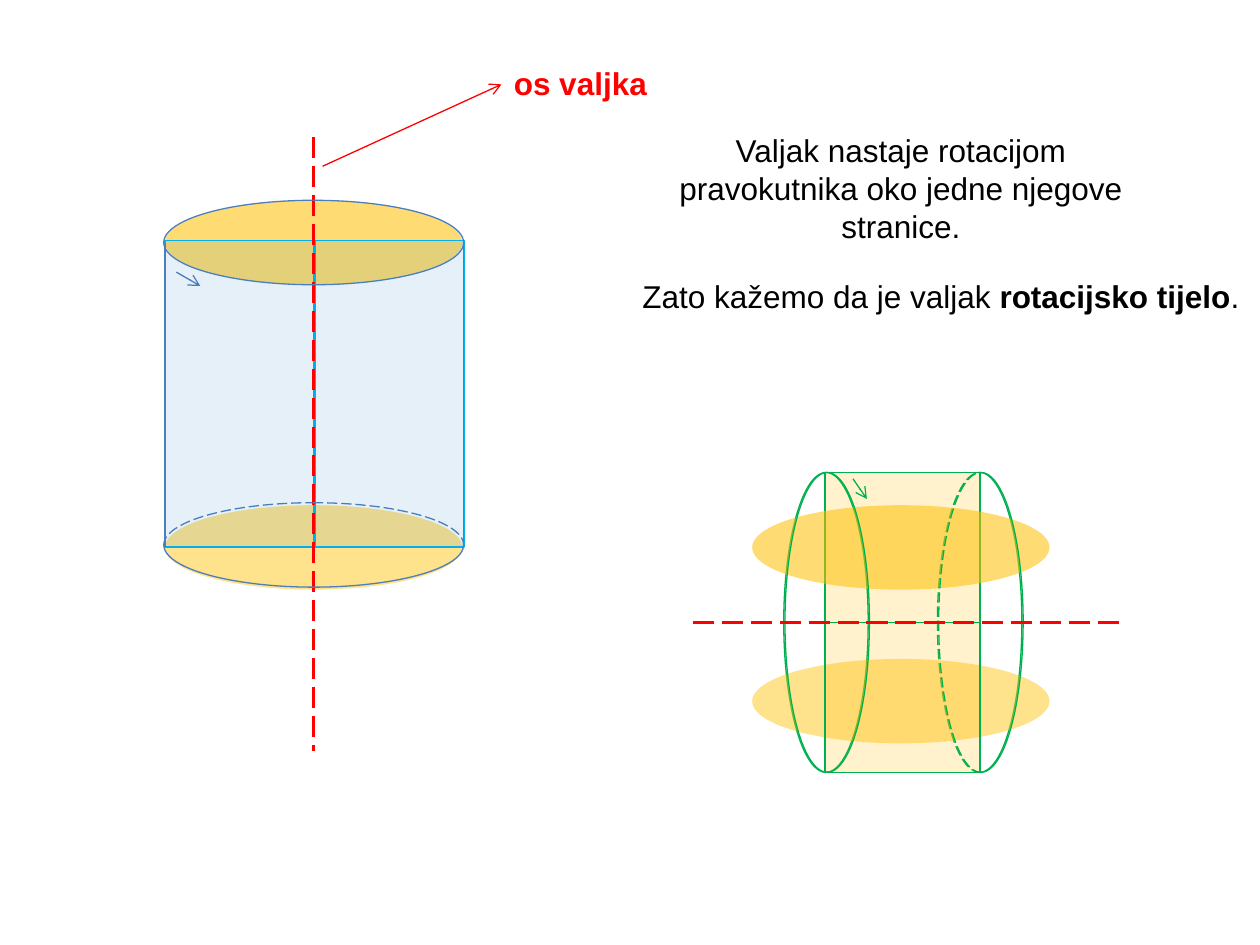
import pptx
import pptx.dml.color
import pptx.enum.dml
import pptx.enum.shapes
import pptx.enum.text
import pptx.oxml
import pptx.oxml.ns
import pptx.util
from pptx.util import Inches

RGBColor = pptx.dml.color.RGBColor
MSO = pptx.enum.shapes.MSO_SHAPE
DASH = pptx.enum.dml.MSO_LINE.LONG_DASH
ALIGN = pptx.enum.text.PP_ALIGN

GOLD = RGBColor(0xFF, 0xC0, 0x00)
GREEN = RGBColor(0x00, 0xB0, 0x50)
BLUE = RGBColor(0x00, 0x70, 0xC0)
SKY = RGBColor(0x00, 0xB0, 0xF0)
STEEL = RGBColor(0x4B, 0x7E, 0xBC)
RED = RGBColor(0xFF, 0x00, 0x00)
BLACK = RGBColor(0x00, 0x00, 0x00)

ARCS = {"left": (107.66, 160.88), "front": (215.63, 107.86), "right": (161.32, 0.57)}


def add_tag(parent, tag, **attrs):
    """Append an empty drawing element to a parent."""
    node = pptx.oxml.parse_xml(f"<a:{tag} {pptx.oxml.ns.nsdecls('a')}/>")
    for name, value in attrs.items():
        node.set(name, str(value))
    parent.append(node)


def set_line(line, color, width, dashed=False):
    """Give a line its colour, width and dash."""
    line.color.rgb = color
    line.width = pptx.util.Pt(width)
    if dashed:
        line.dash_style = DASH


def add_form(shapes, kind, box, fill=None, alpha=100, edge=None, width=1, dashed=False, turned=False):
    """Add a preset shape that covers the box, turned a quarter if asked."""
    x, y, w, h = box
    if turned:
        x, y, w, h = x + (w - h) / 2, y + (h - w) / 2, h, w
    form = shapes.add_shape(kind, Inches(x), Inches(y), Inches(w), Inches(h))
    form.shadow.inherit = False
    form.rotation = 90 if turned else 0
    if fill is None:
        form.fill.background()
    else:
        form.fill.solid()
        form.fill.fore_color.rgb = fill
        color = form.fill._xPr.find(".//" + pptx.oxml.ns.qn("a:srgbClr"))
        add_tag(color, "alpha", val=alpha * 1000)
    if edge is None:
        form.line.fill.background()
    else:
        set_line(form.line, edge, width, dashed)
    return form


def add_rim(shapes, box, color, dashes=(), turned=False):
    """Draw the edge of a base as three arcs."""
    for name, angles in ARCS.items():
        arc = add_form(shapes, MSO.ARC, box, edge=color, width=0.75,
                       dashed=name in dashes, turned=turned)
        for i, angle in enumerate(angles):
            arc.adjustments[i] = angle


def add_line(shapes, start, end, color, width=0.75, dashed=False, arrow=False):
    """Draw a straight line, with an arrowhead at its end if asked."""
    points = [Inches(v) for v in (*start, *end)]
    line = shapes.add_connector(pptx.enum.shapes.MSO_CONNECTOR.STRAIGHT, *points)
    set_line(line.line, color, width, dashed)
    if arrow:
        add_tag(line.line._get_or_add_ln(), "tailEnd", type="arrow")
    add_tag(line._element.spPr, "effectLst")


def add_discs(shapes, x, tops):
    """Draw the upper and lower golden bases."""
    for top, alpha in zip(tops, (55, 45)):
        add_form(shapes, MSO.OVAL, (x, top, 2.36, 0.67), GOLD, alpha)


def add_upright(shapes, box):
    """Draw the standing cylinder with its axis."""
    x, y, w, h = box
    mid, base = x + w / 2, y + 2.4
    add_discs(shapes, x + 0.01, (y, y + 2.42))
    for left in (mid, x + 0.01):
        add_form(shapes, MSO.RECTANGLE, (left, y + 0.32, w / 2, 2.43), BLUE, 10, SKY)
    add_line(shapes, (mid, y - 0.5), (mid, y + 4.37), RED, 1.5, dashed=True)
    add_rim(shapes, (x, y, w, 0.67), STEEL)
    add_rim(shapes, (x, base, w, 0.67), STEEL, ("left", "right"))
    add_line(shapes, (x + 0.1, y + 0.57), (x + 0.29, y + 0.68), STEEL, arrow=True)
    for side in (x + 0.01, x + w):
        add_line(shapes, (side, y + 0.35), (side, y + 2.75), STEEL)


def add_half(shapes, box, lower):
    """Draw one half of the lying cylinder's section."""
    x, y, w, h = box
    top = y + h / 2 if lower else y
    add_form(shapes, MSO.RECTANGLE, (x + 0.33, top, 1.23, 1.19), GOLD, 10, GREEN, turned=True)


def add_rims(shapes, box):
    """Draw both round ends of the lying cylinder."""
    x, y, w, h = box
    add_rim(shapes, (x + w - 0.67, y, 0.67, h), GREEN, ("front",), turned=True)
    add_rim(shapes, (x, y, 0.67, h), GREEN, turned=True)


def add_lying(shapes, box):
    """Draw the lying cylinder with its axis."""
    x, y, w, h = box
    mid = y + h / 2
    add_half(shapes, box, False)
    group = shapes.add_group_shape().shapes
    for lower in (False, True):
        add_half(group, box, lower)
    add_rims(group, box)
    add_discs(shapes, x - 0.25, (y + 0.26, y + 1.48))
    add_half(shapes, box, True)
    add_rims(shapes, (x + 0.01, y, w, h))
    add_line(shapes, (x + 2.66, mid), (x - 0.78, mid), RED, 1.5, dashed=True)
    add_line(shapes, (x + 0.55, y + 0.05), (x + 0.66, y + 0.21), GREEN, arrow=True)


def add_text(shapes, box, runs, color=BLACK, align=ALIGN.LEFT):
    """Add one paragraph made of (words, bold) runs."""
    area = shapes.add_textbox(*[Inches(v) for v in box])
    frame = area.text_frame
    frame.word_wrap = True
    frame.auto_size = pptx.enum.text.MSO_AUTO_SIZE.SHAPE_TO_FIT_TEXT
    para = frame.paragraphs[0]
    para.alignment = align
    para.font.name = "Arial"
    para.font.size = pptx.util.Pt(18)
    para.font.color.rgb = color
    for words, bold in runs:
        run = para.add_run()
        run.text = words
        run.font.bold = bold


def add_notion(shapes, box):
    """State how a cylinder arises, in two texts."""
    x, y, w, h = box
    add_text(shapes, (x, y, 4.3, 1.01),
             [("Valjak nastaje rotacijom pravokutnika oko jedne njegove stranice.", False)],
             align=ALIGN.CENTER)
    add_text(shapes, (x, y + h - 0.4, w, 0.4),
             [("Zato kažemo da je valjak ", False), ("rotacijsko tijelo", True), (".", False)])


def add_label(shapes, box):
    """Name the axis and point from it to the name."""
    x, y, w, h = box
    add_line(shapes, (x - 1.42, y + 0.86), (x, y + h / 2), RED, arrow=True)
    add_text(shapes, box, [("os valjka", True)], RED)


def main():
    """Build and save the slide."""
    deck = pptx.Presentation()
    deck.slide_width, deck.slide_height = Inches(10), Inches(7.5)
    shapes = deck.slides.add_slide(deck.slide_layouts[6]).shapes
    add_lying(shapes, (6.22, 3.75, 1.89, 2.38))
    add_upright(shapes, (1.3, 1.59, 2.38, 3.07))
    add_notion(shapes, (5, 0.99, 5, 1.56))
    add_label(shapes, (3.98, 0.46, 1.37, 0.42))
    deck.save("out.pptx")


if __name__ == "__main__":
    main()
